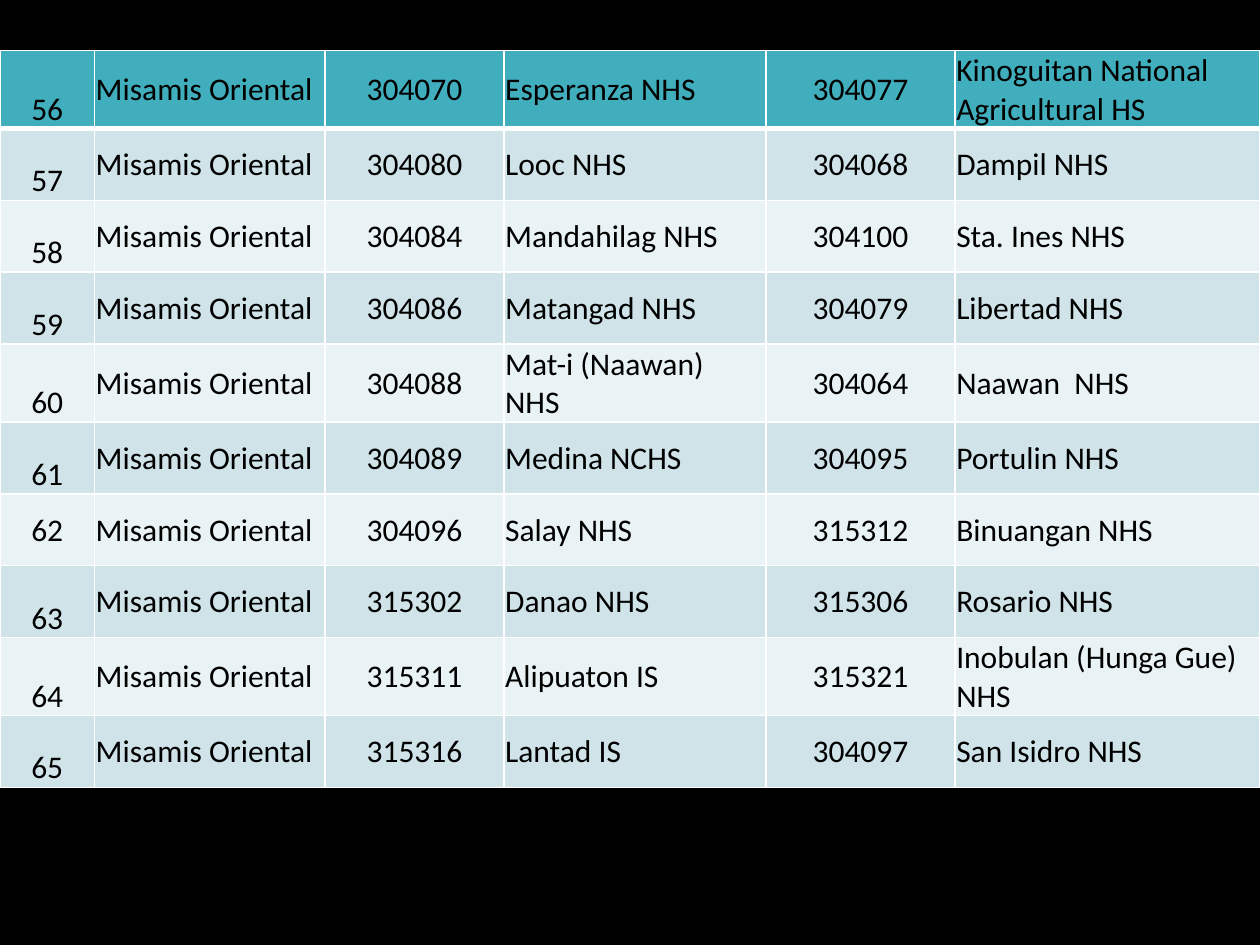
from dataclasses import dataclass

from pptx import Presentation
from pptx.dml.color import RGBColor as Color
from pptx.enum.text import MSO_ANCHOR as Anchor, PP_ALIGN as Align
from pptx.oxml.ns import qn
from pptx.util import Inches, Pt
from lxml.etree import SubElement


@dataclass(frozen=True)
class Theme:
    background: str = "000000"
    text: str = "000000"
    border: str = "FFFFFF"
    header: str = "41AEBD"
    bands: tuple = ("E9F2F4", "CFE3E8")
    font: str = "Calibri"
    size: int = 18
    thin: int = 1
    thick: int = 3


PROVINCE = "Misamis Oriental"
FIRST_NUMBER = 56
CENTERED_NUMBER = 62
COLUMN_WIDTHS = (0.75, 1.83, 1.42, 2.08, 1.5, 2.42)
ROW_HEIGHT = 0.57
SCHOOL_PAIRS = (
    ("304070", "Esperanza NHS", "304077", "Kinoguitan National Agricultural HS"),
    ("304080", "Looc NHS", "304068", "Dampil NHS"),
    ("304084", "Mandahilag NHS", "304100", "Sta. Ines NHS"),
    ("304086", "Matangad NHS", "304079", "Libertad NHS"),
    ("304088", "Mat-i (Naawan) NHS", "304064", "Naawan  NHS"),
    ("304089", "Medina NCHS", "304095", "Portulin NHS"),
    ("304096", "Salay NHS", "315312", "Binuangan NHS"),
    ("315302", "Danao NHS", "315306", "Rosario NHS"),
    ("315311", "Alipuaton IS", "315321", "Inobulan (Hunga Gue) NHS"),
    ("315316", "Lantad IS", "304097", "San Isidro NHS"),
)


def write_text(frame, text, *, font, size, color, align):
    paragraph = frame.paragraphs[0]
    paragraph.alignment = align
    run = paragraph.add_run()
    run.text = text
    run.font.name = font
    run.font.size = Pt(size)
    run.font.bold = False
    run.font.color.rgb = Color.from_string(color)


class SlideBuilder:
    def __init__(self, presentation, theme):
        self.theme = theme
        self.slide = presentation.slides.add_slide(presentation.slide_layouts[6])
        fill = self.slide.background.fill
        fill.solid()
        fill.fore_color.rgb = Color.from_string(theme.background)

    def borders(self, cell, **widths):
        properties = cell._tc.get_or_add_tcPr()
        for side in "LRTB":
            width = widths.get(side, self.theme.thin)
            line = SubElement(properties, qn(f"a:ln{side}"), w=str(Pt(width)))
            solid = SubElement(line, qn("a:solidFill"))
            SubElement(solid, qn("a:srgbClr"), val=self.theme.border)

    def cell(self, cell, text, *, fill, align, anchor, **border_widths):
        cell.margin_left = cell.margin_right = cell.margin_top = Inches(0.01)
        cell.margin_bottom = 0
        cell.vertical_anchor = anchor
        self.borders(cell, **border_widths)
        cell.fill.solid()
        cell.fill.fore_color.rgb = Color.from_string(fill)
        write_text(cell.text_frame, text, font=self.theme.font, size=self.theme.size,
                   color=self.theme.text, align=align)

    def school_table(self, left, top):
        theme = self.theme
        table = self.slide.shapes.add_table(
            len(SCHOOL_PAIRS), len(COLUMN_WIDTHS), Inches(left), Inches(top),
            Inches(sum(COLUMN_WIDTHS)), Inches(ROW_HEIGHT * len(SCHOOL_PAIRS))).table
        table.first_row = table.horz_banding = False
        for column, width in zip(table.columns, COLUMN_WIDTHS):
            column.width = Inches(width)
        for index, pair in enumerate(SCHOOL_PAIRS):
            table.rows[index].height = Inches(ROW_HEIGHT)
            number = FIRST_NUMBER + index
            fill = theme.bands[index % 2] if index else theme.header
            edges = {0: {"B": theme.thick}, 1: {"T": theme.thick}}.get(index, {})
            for position, text in enumerate((str(number), PROVINCE, *pair)):
                low = position == 0 and number != CENTERED_NUMBER
                self.cell(table.cell(index, position), text, fill=fill,
                          align=Align.LEFT if position % 2 else Align.CENTER,
                          anchor=Anchor.BOTTOM if low else Anchor.MIDDLE, **edges)


def main():
    presentation = Presentation()
    presentation.slide_width = Inches(10)
    presentation.slide_height = Inches(7.5)
    SlideBuilder(presentation, Theme()).school_table(0, 0.4)
    presentation.save("out.pptx")


if __name__ == "__main__":
    main()
